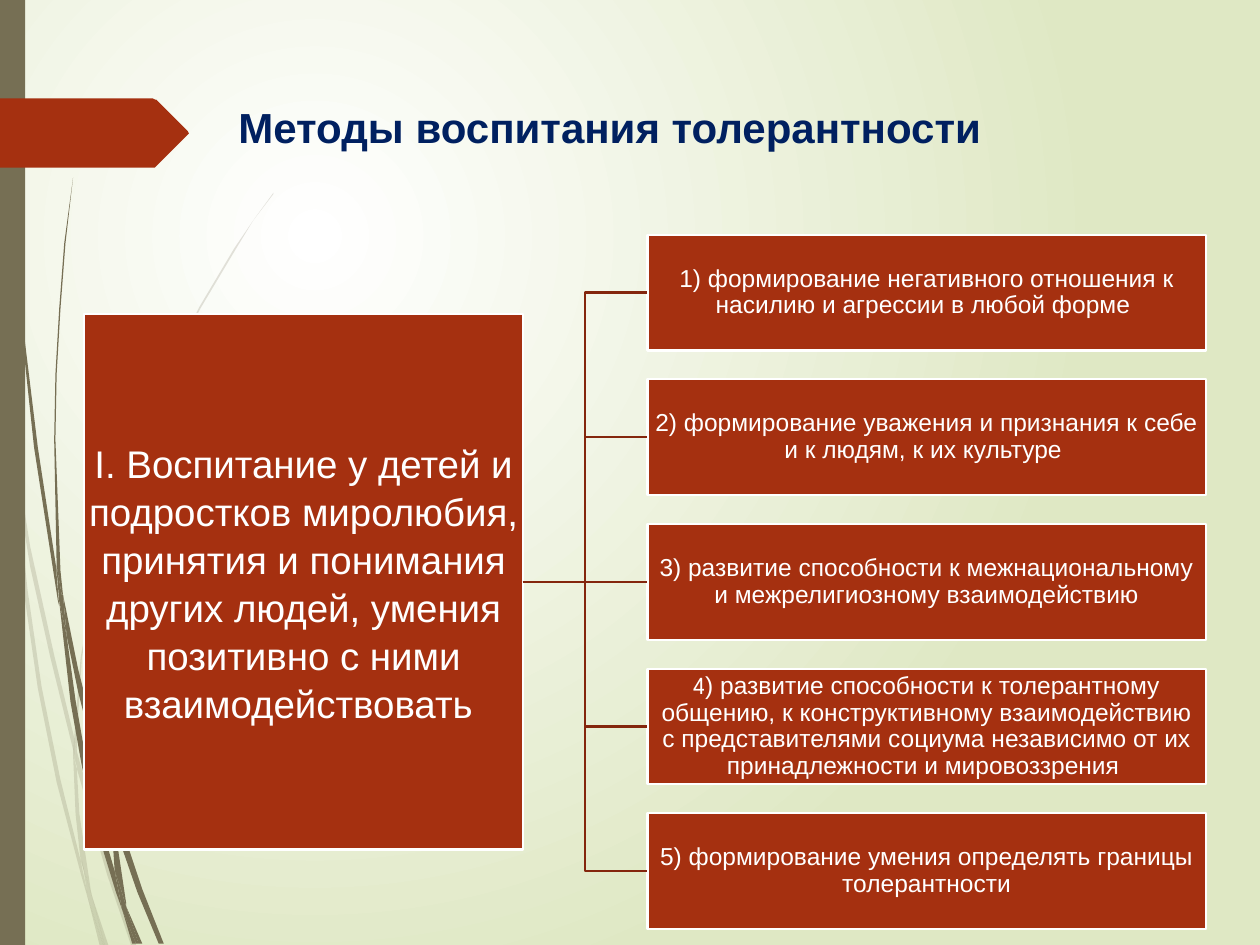
import pptx
import pptx.dml.color
import pptx.enum.shapes
import pptx.enum.text
import pptx.oxml
import pptx.oxml.ns
import pptx.util

Pt = pptx.util.Pt
SHAPES = pptx.enum.shapes.MSO_SHAPE
CONNECTORS = pptx.enum.shapes.MSO_CONNECTOR
ANCHORS = pptx.enum.text.MSO_ANCHOR
RUST, DARK_RUST, OLIVE, WHITE, NAVY = "A53010", "84260D", "766F54", "FFFFFF", "002060"
GRID = Pt(0.72)  # outline points are counted in steps of 0.72 pt

PALE_BLADES = [
    [(8, 350), (6, 322), (0, 282), (0, 299), (7, 344)],
    [(40, 522), (59, 599), (59, 586), (43, 520), (24, 434), (10, 345), (12, 376), (24, 450)],
    [(64, 607), (61, 596), (61, 610), (85, 694), (104, 750), (108, 750), (88, 692)],
    [(83, 750), (86, 750), (73, 711)],
    [(64, 683), (48, 619), (33, 545), (22, 469), (12, 376), (8, 350), (19, 470), (30, 546),
     (45, 621), (64, 693), (70, 714), (69, 707)],
    [(58, 599), (60, 646), (64, 683), (67, 692), (73, 711), (72, 706), (63, 646), (61, 610)],
    [(61, 584), (65, 522), (76, 462), (92, 404), (111, 349), (134, 295), (159, 245), (187, 198),
     (201, 175), (217, 154), (217, 153), (201, 175), (186, 197), (158, 244), (133, 294),
     (110, 348), (91, 403), (75, 461), (64, 522), (59, 584), (59, 586), (61, 596)],
    [(70, 714), (79, 750), (82, 750)],
    [(61, 608), (61, 596), (59, 586), (58, 599)],
    [(67, 692), (65, 683), (69, 707), (70, 714), (82, 750), (83, 750), (73, 711)],
]
DARK_BLADES = [
    [(5, 110), (14, 233), (27, 355), (46, 477), (47, 481), (45, 457), (45, 453), (30, 355),
     (15, 232), (6, 109), (4, 48), (3, 0), (2, 0), (3, 48)],
    [(73, 592), (88, 645), (88, 631), (77, 590), (62, 531), (50, 472), (53, 505), (62, 549)],
    [(94, 649), (91, 641), (91, 656), (109, 708), (126, 749), (130, 749), (113, 706)],
    [(91, 691), (81, 657), (69, 607), (60, 556), (53, 505), (47, 477), (56, 557), (65, 608),
     (77, 659), (92, 708), (97, 722), (96, 717)],
    [(50, 472), (48, 453), (44, 349), (45, 297), (48, 245), (52, 193), (58, 141), (51, 193),
     (47, 245), (44, 297), (43, 349), (45, 449), (49, 472)],
    [(110, 749), (113, 749), (100, 719)],
    [(47, 477), (53, 505), (50, 472), (49, 472), (45, 449), (45, 453)],
    [(97, 722), (105, 749), (108, 749)],
    [(88, 645), (91, 691), (96, 706), (100, 719), (100, 716), (91, 656), (90, 651)],
    [(96, 706), (91, 691), (96, 717), (97, 722), (108, 749), (110, 749), (100, 719)],
]
TAG = [(149, 107), (124, 132), (123, 133), (121, 133), (0, 133), (0, 78), (121, 78),
       (123, 79), (124, 79), (149, 104), (150, 105.5)]

ROOT_TEXT = [("I. Воспитание у детей и подростков миролюбия, принятия и понимания "
              "других людей, умения позитивно с ними взаимодействовать ", "Arial")]
BRANCH_TEXTS = [
    [("1) формирование негативного отношения к насилию и агрессии в любой форме ", "Arial")],
    [("2) формирование уважения и признания к себе и к людям, к их культуре ", "Arial")],
    [("3) развитие способности к межнациональному\nи межрелигиозному взаимодействию", "Arial")],
    [("4", "League Spartan"),
     (") развитие способности к толерантному общению, к конструктивному взаимодействию\n"
      "с представителями социума независимо от их принадлежности и мировоззрения ", "Arial")],
    [("5) формирование умения определять границы толерантности", "Arial")],
]


def color(hex_text):
    return pptx.dml.color.RGBColor.from_string(hex_text)


def paint(shape, fill, line=None):
    shape.shadow.inherit = False
    shape.fill.solid()
    shape.fill.fore_color.rgb = color(fill)
    if line:
        shape.line.color.rgb = color(line)
        shape.line.width = Pt(1.25)
    else:
        shape.line.fill.background()


def write(shape, spans, size, hex_text, margin, spacing=1.0, bold=False, anchor=ANCHORS.MIDDLE):
    """Fill a shape with one centred paragraph of (text, font) spans."""
    frame = shape.text_frame
    frame.word_wrap = True
    frame.vertical_anchor = anchor
    frame.margin_left = frame.margin_right = frame.margin_top = frame.margin_bottom = Pt(margin)
    para = frame.paragraphs[0]
    para.alignment = pptx.enum.text.PP_ALIGN.CENTER
    para.line_spacing = spacing
    for text, font in spans:
        for number, line in enumerate(text.split("\n")):
            if number:
                para.add_line_break()
            span = para.add_run()
            span.text = line
            span.font.name = font
            span.font.size = Pt(size)
            span.font.bold = bold
            span.font.color.rgb = color(hex_text)


def add_outline(page, points, fill, opacity=100):
    builder = page.shapes.build_freeform(*points[0], scale=GRID)
    builder.add_line_segments(points[1:], close=True)
    shape = builder.convert_to_shape()
    paint(shape, fill)
    if opacity < 100:
        fill_color = shape.fill._xPr.find(".//" + pptx.oxml.ns.qn("a:srgbClr"))
        alpha = fill_color.makeelement(pptx.oxml.ns.qn("a:alpha"), {"val": str(opacity * 1000)})
        fill_color.append(alpha)


def add_background(page):
    """Radial gradient centred a quarter of the way into the page."""
    fill = page.background.fill
    fill.gradient()
    for stop, position, hex_text in zip(fill.gradient_stops, (0, 1), (WHITE, "DFE8C4")):
        stop.position = position
        stop.color.rgb = color(hex_text)
    linear = page._element.find(".//" + pptx.oxml.ns.qn("a:lin"))
    radial = pptx.oxml.parse_xml(
        f'<a:path {pptx.oxml.ns.nsdecls("a")} path="circle">'
        '<a:fillToRect l="50000" t="50000" r="100000" b="100000"/></a:path>')
    linear.getparent().replace(linear, radial)


def add_decoration(page, width, height):
    # Grass blades
    for blades, opacity in ((PALE_BLADES, 20), (DARK_BLADES, 100)):
        for blade in blades:
            add_outline(page, blade, OLIVE, opacity)
    # Side bar and title tag
    bar = page.shapes.add_shape(SHAPES.RECTANGLE, 0, 0, Pt(width), Pt(height))
    paint(bar, OLIVE)
    add_outline(page, TAG, RUST)


def add_title(page, left, top, width, height):
    box = page.shapes.add_textbox(Pt(left), Pt(top), Pt(width), Pt(height))
    write(box, [("Методы воспитания толерантности", "Arial")], 24, NAVY, 3.6,
          bold=True, anchor=ANCHORS.TOP)


def add_card(page, left, top, width, height, spans, size, margin, spacing):
    box = page.shapes.add_shape(SHAPES.RECTANGLE, Pt(left), Pt(top), Pt(width), Pt(height))
    paint(box, RUST, WHITE)
    write(box, spans, size, WHITE, margin, spacing)
    return box


def add_link(page, root, branch, kind):
    link = page.shapes.add_connector(kind, 0, 0, 0, 0)
    link.begin_connect(root, 3)
    link.end_connect(branch, 1)
    link.line.color.rgb = color(DARK_RUST)
    link.line.width = Pt(1.25)
    properties = link._element.spPr
    properties.append(properties.makeelement(pptx.oxml.ns.qn("a:effectLst"), {}))


def add_tree(page, left, top, width, height):
    """Root card on the left, an even column of branches on the right."""
    root_width, root_height = 250.6, 306
    branch_width, branch_height = 319, 66.1
    step = (height - branch_height) / (len(BRANCH_TEXTS) - 1)
    root = add_card(page, left, top + (height - root_height) / 2, root_width, root_height,
                    ROOT_TEXT, 22, 1.4, 1.04)
    for number, spans in enumerate(BRANCH_TEXTS):
        branch = add_card(page, left + width - branch_width, top + number * step,
                          branch_width, branch_height, spans, 14, 0.7, 0.9)
        is_middle = number == len(BRANCH_TEXTS) // 2
        add_link(page, root, branch, CONNECTORS.STRAIGHT if is_middle else CONNECTORS.ELBOW)


def main():
    deck = pptx.Presentation()
    deck.slide_width, deck.slide_height = Pt(720), Pt(540)
    page = deck.slides.add_slide(deck.slide_layouts[6])
    add_background(page)
    add_decoration(page, 14.4, 540)
    add_tree(page, 48.2, 134.2, 640.8, 396.6)
    add_title(page, 127.4, 54.7, 442.1, 33.8)
    deck.save("out.pptx")


if __name__ == "__main__":
    main()
